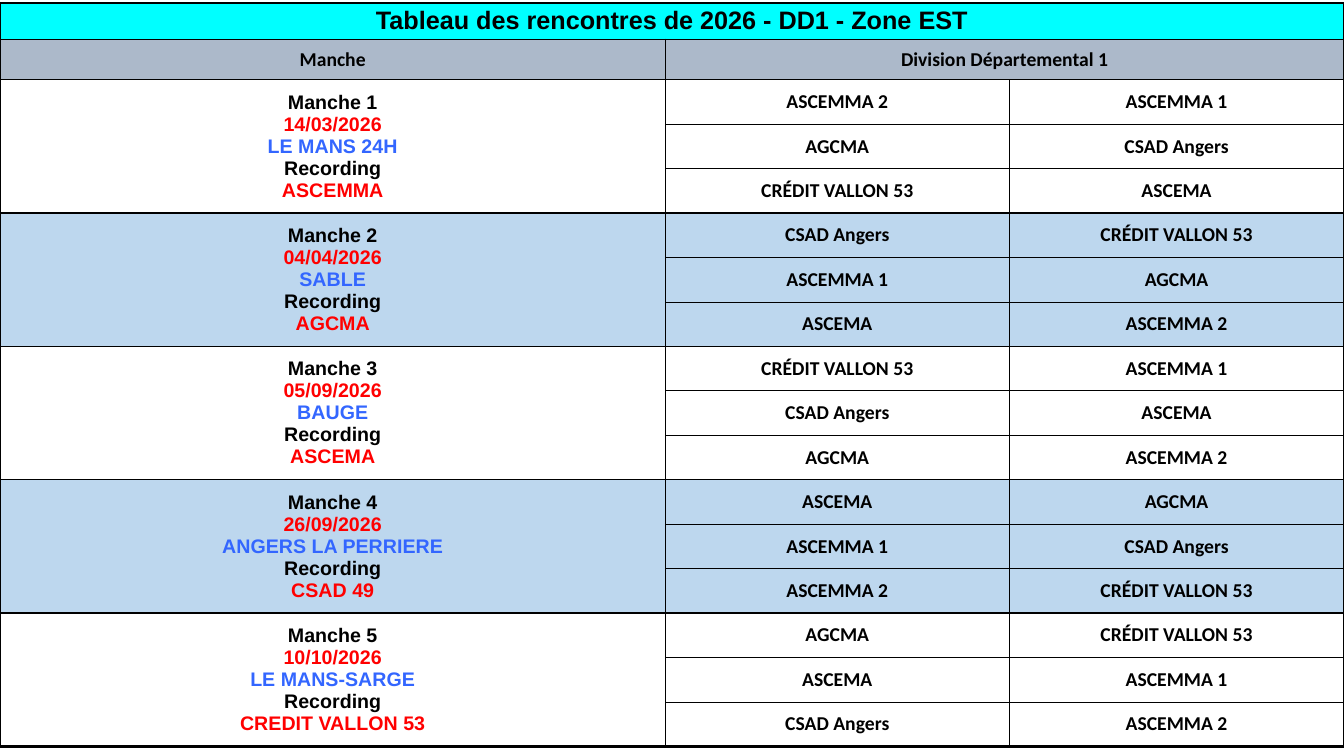
from lxml import etree
from pptx import Presentation
from pptx.dml.color import RGBColor
from pptx.enum import text
from pptx.oxml import ns
from pptx.util import Inches, Pt

BLACK = RGBColor(0x00, 0x00, 0x00)
RED = RGBColor(0xFF, 0x00, 0x00)
BLUE = RGBColor(0x33, 0x66, 0xFF)
CYAN = RGBColor(0x00, 0xFF, 0xFF)
GREY = RGBColor(0xAC, 0xB9, 0xCA)
PALE_BLUE = RGBColor(0xBD, 0xD7, 0xEE)

BANK = "CRÉDIT VALLON 53"
HEADER_ROWS = 2
MATCHES = 3
LINE_COLOURS = [BLACK, RED, BLUE, BLACK, RED]

# Each round: date, place, recording club, then its three matches
rounds = [
    ("14/03/2026", "LE MANS 24H", "ASCEMMA",
     [("ASCEMMA 2", "ASCEMMA 1"), ("AGCMA", "CSAD Angers"), (BANK, "ASCEMA")]),
    ("04/04/2026", "SABLE", "AGCMA",
     [("CSAD Angers", BANK), ("ASCEMMA 1", "AGCMA"), ("ASCEMA", "ASCEMMA 2")]),
    ("05/09/2026", "BAUGE", "ASCEMA",
     [(BANK, "ASCEMMA 1"), ("CSAD Angers", "ASCEMA"), ("AGCMA", "ASCEMMA 2")]),
    ("26/09/2026", "ANGERS LA PERRIERE", "CSAD 49",
     [("ASCEMA", "AGCMA"), ("ASCEMMA 1", "CSAD Angers"), ("ASCEMMA 2", BANK)]),
    ("10/10/2026", "LE MANS-SARGE", "CREDIT VALLON 53",
     [("AGCMA", BANK), ("ASCEMA", "ASCEMMA 1"), ("CSAD Angers", "ASCEMMA 2")]),
]
row_count = HEADER_ROWS + MATCHES * len(rounds)


def write_cell(cell, lines, font="Calibri", size=14, colours=(BLACK,)):
    para = cell.text_frame.paragraphs[0]
    para.alignment = text.PP_ALIGN.CENTER
    for number, (line, colour) in enumerate(zip(lines, colours)):
        if number:
            para.add_line_break()
        span = para.add_run()
        span.text = line
        for name, value in {"name": font, "size": Pt(size), "bold": True}.items():
            setattr(span.font, name, value)
        span.font.color.rgb = colour
    # Line breaks take the size of the text around them
    para.font.size = Pt(size)


def draw_borders(cell, weights):
    properties = cell._tc.get_or_add_tcPr()
    for side, weight in weights.items():
        line = etree.SubElement(properties, ns.qn(f"a:ln{side}"), w=str(Pt(weight)))
        fill = etree.SubElement(line, ns.qn("a:solidFill"))
        etree.SubElement(fill, ns.qn("a:srgbClr"), val=str(BLACK))


deck = Presentation()
deck.slide_width, deck.slide_height = Inches(13.33), Inches(7.5)
page = deck.slides.add_slide(deck.slide_layouts[6])

# Table grid
table = page.shapes.add_table(
    row_count, 3, Inches(0), Inches(0.03), Inches(13.33), Inches(7.38)).table
table.first_row = table.horz_banding = False
for column, width in zip(table.columns, [6.6, 3.41, 3.32]):
    column.width = Inches(width)
match_height = 6.62 / (row_count - HEADER_ROWS)
for index, row in enumerate(table.rows):
    row.height = Inches([0.36, 0.4][index] if index < HEADER_ROWS else match_height)

# Title and column headings
table.cell(0, 0).merge(table.cell(0, 2))
table.cell(1, 1).merge(table.cell(1, 2))
write_cell(table.cell(0, 0), ["Tableau des rencontres de 2026 - DD1 - Zone EST"], "Arial", 18)
write_cell(table.cell(1, 0), ["Manche"])
write_cell(table.cell(1, 1), ["Division Départemental 1"])

# Rounds and their matches
fills = [CYAN, GREY]
for index, (date, place, club, matches) in enumerate(rounds):
    top = HEADER_ROWS + MATCHES * index
    fills += [PALE_BLUE if index % 2 else None] * MATCHES
    table.cell(top, 0).merge(table.cell(top + MATCHES - 1, 0))
    write_cell(table.cell(top, 0), [f"Manche {index + 1}", date, place, "Recording", club],
               "Arial", colours=LINE_COLOURS)
    for offset, teams in enumerate(matches):
        for column, team in enumerate(teams, 1):
            write_cell(table.cell(top + offset, column), [team])

# Line weights: thick outside, medium between rounds, thin inside a round
across = [1 if edge <= HEADER_ROWS or (edge - HEADER_ROWS) % MATCHES == 0 else 0.5
          for edge in range(row_count + 1)]
across[0] = across[-1] = 2

# Margins, borders and fills
for row in range(row_count):
    inner = 1 if row < HEADER_ROWS else 0.5
    down = [2, inner, inner, 2]
    for column in range(3):
        cell = table.cell(row, column)
        cell.vertical_anchor = text.MSO_ANCHOR.MIDDLE
        for side in ("left", "right", "top", "bottom"):
            setattr(cell, f"margin_{side}", 0)
        draw_borders(cell, {
            "L": down[column],
            "R": down[column + cell.span_width],
            "T": across[row],
            "B": across[row + cell.span_height],
        })
        if fills[row] is None:
            cell.fill.background()
        else:
            cell.fill.solid()
            cell.fill.fore_color.rgb = fills[row]

deck.save("out.pptx")
